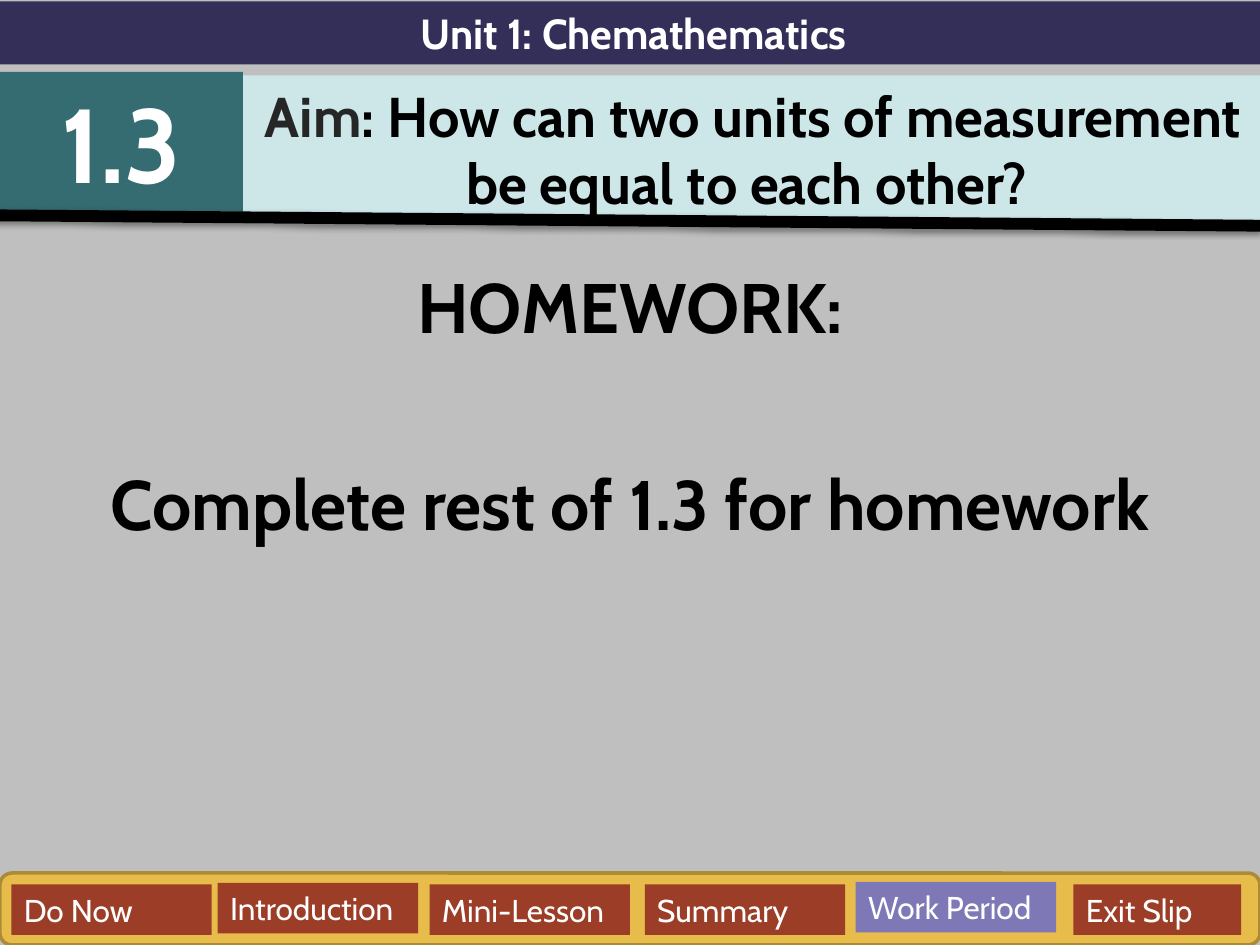
from lxml import etree
from pptx import Presentation
from pptx.dml.color import RGBColor
from pptx.enum.shapes import MSO_CONNECTOR as Link, MSO_SHAPE as Shape
from pptx.enum.text import MSO_ANCHOR as Anchor, MSO_AUTO_SIZE as Fit, PP_ALIGN as Align
from pptx.oxml.ns import qn
from pptx.util import Cm, Pt

FONT = "Cabin"
WHITE, BLACK = "FFFFFF", "000000"
RUST, VIOLET = "9C3D28", "7E78B7"
TABS = [
    ("Do Now", 0.23, 0.23, 4.04, RUST),
    ("Introduction", 4.39, 0.2, 4.04, RUST),
    ("Mini-Lesson", 8.66, 0.23, 4.04, RUST),
    ("Summary", 13, 0.23, 4.04, RUST),
    ("Work Period", 17.25, 0.18, 4.04, VIOLET),
    ("Exit Slip", 21.64, 0.23, 3.38, RUST),
]


def paint(target, color):
    """Give a fill one solid colour."""
    target.solid()
    target.fore_color.rgb = RGBColor.from_string(color)


def write(para, spans, size, bold=True, align=Align.CENTER):
    """Add (text, colour) spans to a paragraph."""
    para.alignment = align
    for text, color in spans:
        span = para.add_run()
        span.text = text
        span.font.name = FONT
        span.font.size = Pt(size)
        span.font.bold = bold
        span.font.color.rgb = RGBColor.from_string(color)


def add_block(shapes, box, color, kind=Shape.RECTANGLE):
    """Add a flat shape without an outline."""
    block = shapes.add_shape(kind, *map(Cm, box))
    block.shadow.inherit = False
    paint(block.fill, color)
    block.line.fill.background()
    return block


def add_label(shapes, box, color, spans, size, bold=True, align=Align.CENTER):
    """Add a filled rectangle whose text starts at its top."""
    frame = add_block(shapes, box, color).text_frame
    frame.word_wrap = True
    frame.auto_size = Fit.SHAPE_TO_FIT_TEXT
    frame.vertical_anchor = Anchor.TOP
    write(frame.paragraphs[0], spans, size, bold, align)


def add_rule(page, start, end):
    """Add the thick black rule with its soft shadow."""
    rule = page.shapes.add_connector(Link.STRAIGHT, *map(Cm, start + end))
    rule.line.width = Pt(6.75)
    paint(rule.line.fill, BLACK)
    effects = etree.SubElement(rule._element.spPr, qn("a:effectLst"))
    shadow = etree.SubElement(
        effects, qn("a:outerShdw"), blurRad=str(Pt(3.1)), dist=str(Pt(1.6)),
        dir="5400000", rotWithShape="0")
    tint = etree.SubElement(shadow, qn("a:srgbClr"), val=BLACK)
    etree.SubElement(tint, qn("a:alpha"), val="38000")


def add_heading(page, box):
    """Place the unit title, lesson number, aim and rule."""
    left, top, width, height = box
    split = left + 4.9
    add_label(page.shapes, (left, top, width + 0.15, 1.27), "342F59",
              [("Unit 1: Chemathematics", WHITE)], 24)
    add_label(page.shapes, (left, top + 1.42, 4.9, 2.82), "346C71",
              [("1.3", WHITE)], 60)
    add_label(page.shapes, (split, top + 1.49, width - 4.83, 3), "CDE6E8",
              [("Aim", "262626"),
               (": How can two units of measurement be equal to each other? ", BLACK)], 32)
    add_rule(page, (left - 0.13, top + height - 0.21), (left + width, top + height))


def add_homework(page, box):
    """Place the homework heading and task."""
    frame = page.shapes.add_textbox(*map(Cm, box)).text_frame
    frame.word_wrap = True
    write(frame.paragraphs[0], [("HOMEWORK:", BLACK)], 40)
    task = frame.add_paragraph()
    task.space_before = Pt(64.6)
    write(task, [("Complete rest of 1.3 for homework", BLACK)], 40)


def add_navigation(page, box):
    """Place the rounded bar and its lesson tabs."""
    left, top = box[:2]
    group = page.shapes.add_group_shape()
    bar = add_block(group.shapes, box, "E8BC4A", Shape.ROUNDED_RECTANGLE)
    paint(bar.line.fill, "AC8B37")
    bar.line.width = Pt(2)
    for name, across, down, width, color in TABS:
        add_label(group.shapes, (left + across, top + down, width, 1.02), color,
                  [(name, WHITE)], 18, False, Align.LEFT)


def main():
    """Build the homework slide."""
    deck = Presentation()
    deck.slide_width, deck.slide_height = Cm(25.4), Cm(19.05)
    page = deck.slides.add_slide(deck.slide_layouts[6])
    paint(page.background.fill, "BFBFBF")
    add_homework(page, (0, 5.18, 25.4, 13.87))
    add_heading(page, (0, 0.03, 25.4, 4.52))
    add_navigation(page, (0, 17.6, 25.4, 1.45))
    deck.save("out.pptx")


if __name__ == "__main__":
    main()
